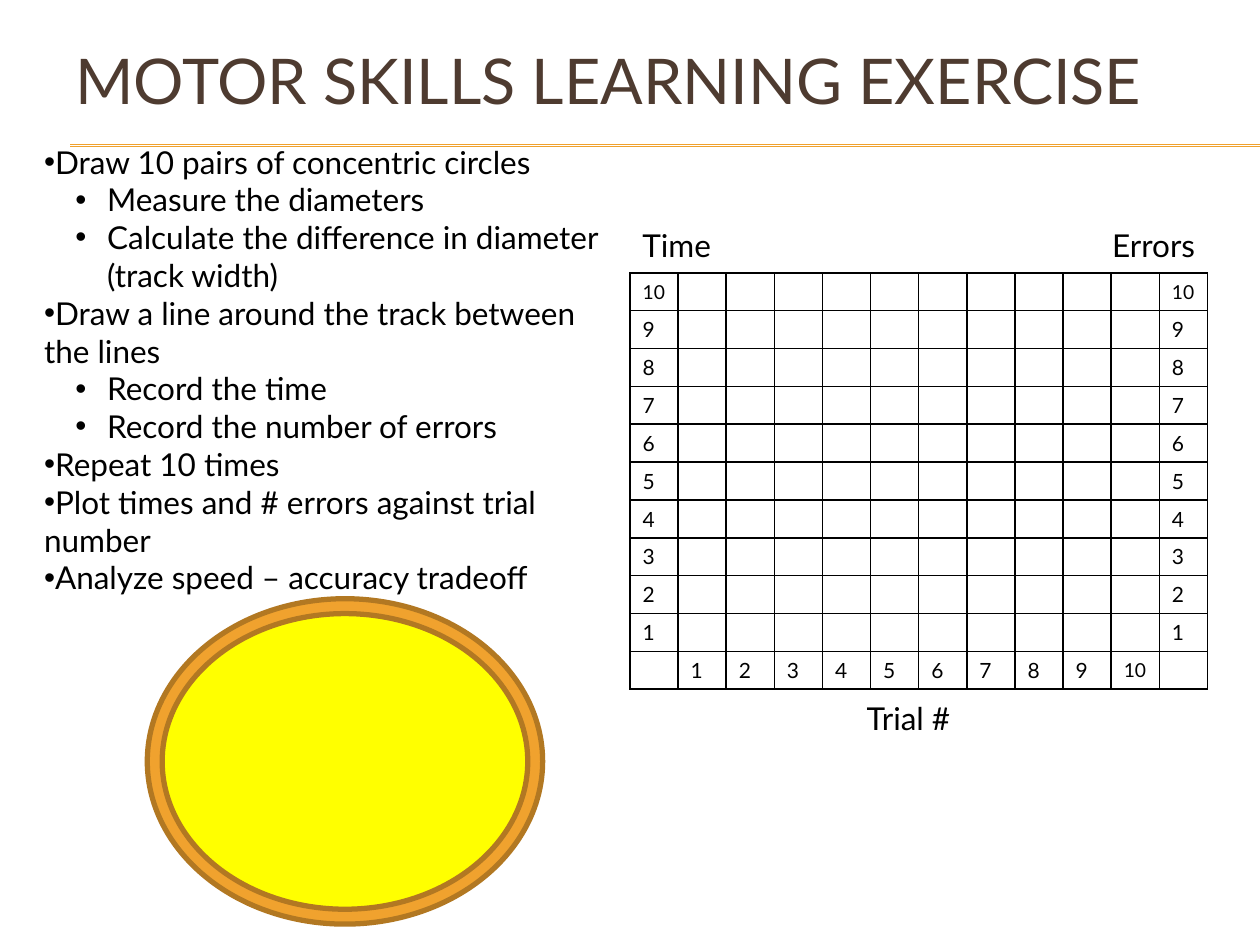
from lxml import etree
from pptx import Presentation
from pptx.dml.color import RGBColor
from pptx.enum.shapes import MSO_CONNECTOR, MSO_SHAPE
from pptx.enum.text import MSO_ANCHOR, PP_ALIGN
from pptx.oxml.ns import qn
from pptx.util import Cm, Pt

LEFT, MID, RIGHT = PP_ALIGN.LEFT, PP_ALIGN.CENTER, PP_ALIGN.RIGHT
TOP, CENTER = MSO_ANCHOR.TOP, MSO_ANCHOR.MIDDLE
OVAL, LINE = MSO_SHAPE.OVAL, MSO_CONNECTOR.STRAIGHT

FONT = "Lato"
COLORS = {"title": "4E3B30", "text": "000000", "rule": "F0A22E",
          "track": "F0A22E", "edge": "B27822", "core": "FFFF00"}
STEPS = [
    (0, "Draw 10 pairs of concentric circles"),
    (1, "Measure the diameters"),
    (1, "Calculate the difference in diameter (track width)"),
    (0, "Draw a line around the track between the lines"),
    (1, "Record the time"),
    (1, "Record the number of errors"),
    (0, "Repeat 10 times"),
    (0, "Plot times and # errors against trial number"),
    (0, "Analyze speed – accuracy tradeoff"),
]
TRIALS = 10


def color(name):
    return RGBColor.from_string(COLORS[name])


def write(para, text, size=18, tint="text", align=LEFT):
    para.alignment = align
    run = para.add_run()
    run.text = text
    run.font.name = FONT
    run.font.size = Pt(size)
    run.font.color.rgb = color(tint)


def add_box(slide, x, y, w, h, anchor=TOP):
    frame = slide.shapes.add_textbox(Cm(x), Cm(y), Cm(w), Cm(h)).text_frame
    frame.word_wrap = True
    frame.vertical_anchor = anchor
    return frame


def add_bullet(para, level):
    props = para._p.get_or_add_pPr()
    if level:
        para.level = level
        props.set("marL", str(Cm(1.27)))
        props.set("indent", str(Cm(-0.64)))
    font = etree.SubElement(props, qn("a:buFont"))
    font.set("typeface", "Arial")
    etree.SubElement(props, qn("a:buChar")).set("char", "•")


def add_border(cell):
    props = cell._tc.get_or_add_tcPr()
    for spot, side in enumerate("LRTB"):
        line = etree.Element(qn(f"a:ln{side}"), w=str(Pt(1)))
        fill = etree.SubElement(line, qn("a:solidFill"))
        etree.SubElement(fill, qn("a:srgbClr")).set("val", COLORS["text"])
        props.insert(spot, line)


def draw_title(slide, x, y, w, h):
    for drop in (2.92, 2.95):
        rule = slide.shapes.add_connector(
            LINE, Cm(x + 0.15), Cm(y + drop), Cm(25.4), Cm(y + drop))
        rule.line.color.rgb = color("rule")
        rule.line.width = Pt(0.75)
        etree.SubElement(rule._element.spPr, qn("a:effectLst"))
    frame = add_box(slide, x, y, w, h, anchor=CENTER)
    write(frame.paragraphs[0], "MOTOR SKILLS LEARNING EXERCISE",
          size=36, tint="title")


def draw_track(slide, x, y, w, h):
    """Draw the two concentric ovals as one group."""
    group = slide.shapes.add_group_shape()
    for gap, tint in ((0, "track"), (0.3, "core")):
        oval = group.shapes.add_shape(
            OVAL, Cm(x + gap), Cm(y + gap), Cm(w - 2 * gap), Cm(h - 2 * gap))
        oval.shadow.inherit = False
        oval.fill.solid()
        oval.fill.fore_color.rgb = color(tint)
        oval.line.color.rgb = color("edge")
        oval.line.width = Pt(3)


def draw_steps(slide, x, y, w, h):
    frame = add_box(slide, x, y, w, h)
    for i, (level, text) in enumerate(STEPS):
        para = frame.add_paragraph() if i else frame.paragraphs[0]
        write(para, text)
        add_bullet(para, level)


def label(row, col):
    """Give the scale value of a cell, or no text inside the plot area."""
    if row < TRIALS:
        return str(TRIALS - row) if col in (0, TRIALS + 1) else ""
    return str(col) if 1 <= col <= TRIALS else ""


def draw_grid(slide, x, y, w, h):
    """Draw the plot grid with its axis names around it."""
    wide, high = 2.33, 1.06
    names = (("Time", 0, -high, LEFT), ("Errors", w - wide, -high, RIGHT),
             ("Trial #", 4.45, h + 0.08, MID))
    for text, dx, dy, align in names:
        frame = add_box(slide, x + dx, y + dy, wide, high)
        write(frame.paragraphs[0], text, align=align)

    rows, cols = TRIALS + 1, TRIALS + 2
    table = slide.shapes.add_table(
        rows, cols, Cm(x), Cm(y), Cm(w), Cm(h)).table
    table.first_row = table.horz_banding = False
    for row in range(rows):
        table.rows[row].height = Cm(h / rows)
        for col in range(cols):
            table.columns[col].width = Cm(w / cols)
            cell = table.cell(row, col)
            cell.fill.background()
            cell.margin_top = cell.margin_bottom = 0
            cell.vertical_anchor = CENTER
            add_border(cell)
            text = label(row, col)
            if text:
                write(cell.text_frame.paragraphs[0], text,
                      size=11 if text == "10" else 12)


def main():
    deck = Presentation()
    deck.slide_width, deck.slide_height = Cm(25.4), Cm(19.05)
    slide = deck.slides.add_slide(deck.slide_layouts[6])
    draw_title(slide, 1.27, 0, 22.86, 3.18)
    draw_track(slide, 2.97, 12.07, 7.97, 6.56)
    draw_steps(slide, 0.64, 2.75, 12.27, 8.71)
    draw_grid(slide, 12.7, 5.5, 11.64, 8.39)
    deck.save("out.pptx")


if __name__ == "__main__":
    main()
